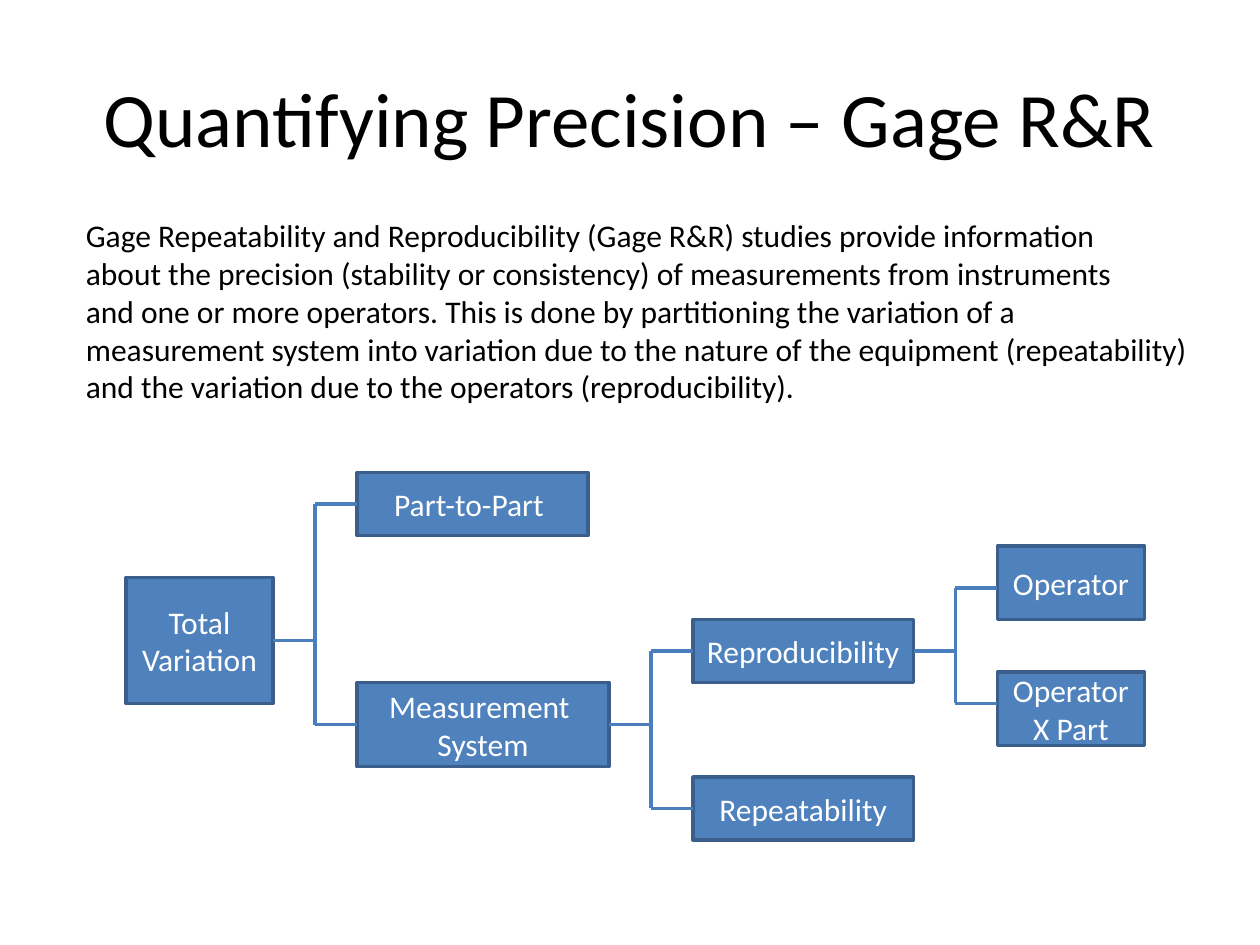
from lxml.etree import SubElement
from pptx import Presentation
from pptx.dml.color import RGBColor
from pptx.enum.shapes import MSO_CONNECTOR, MSO_SHAPE
from pptx.enum.text import MSO_ANCHOR, MSO_AUTO_SIZE, PP_ALIGN
from pptx.oxml.ns import qn
from pptx.util import Pt

COLORS = {
    "text": "000000",
    "box": "4F81BD",
    "box_text": "FFFFFF",
    "box_line": "3A5F8C",
    "branch": "4B7EBC",
}
INTRODUCTION = """Gage Repeatability and Reproducibility (Gage R&R) studies provide information
about the precision (stability or consistency) of measurements from instruments
and one or more operators. This is done by partitioning the variation of a
measurement system into variation due to the nature of the equipment (repeatability)
and the variation due to the operators (reproducibility)."""
BOXES = {
    "total": ("Total\nVariation", 72, 330, 84, 72),
    "part": ("Part-to-Part ", 204, 270, 132, 36),
    "measurement": ("Measurement \nSystem", 204, 390, 144, 48),
    "repeatability": ("Repeatability", 396, 444, 126, 36),
    "reproducibility": ("Reproducibility", 396, 354, 126, 36),
    "operator": ("Operator", 570, 312, 84, 42),
    "interaction": ("Operator\nX Part", 570, 384, 84, 42),
}
BRANCH_GAP = Pt(24)
LEFT_SIDE, RIGHT_SIDE = 1, 3


def color(name):
    return RGBColor.from_string(COLORS[name])


def write_text(frame, text, size=18, fill="text", font="Calibri",
               align=PP_ALIGN.LEFT, anchor=MSO_ANCHOR.TOP, wrap=True):
    frame.word_wrap = wrap
    frame.vertical_anchor = anchor
    for index, line in enumerate(text.split("\n")):
        paragraph = frame.paragraphs[0] if index == 0 else frame.add_paragraph()
        paragraph.alignment = align
        run = paragraph.add_run()
        run.text = line
        run.font.name = font
        run.font.size = Pt(size)
        run.font.color.rgb = color(fill)


def middle(shape):
    return shape.top + shape.height // 2


class DiagramSlide:
    line_width = Pt(2)

    def __init__(self, presentation):
        self.slide = presentation.slides.add_slide(presentation.slide_layouts[6])
        self.shapes = self.slide.shapes

    def text_box(self, text, left, top, width, height, fit=False, **text_format):
        shape = self.shapes.add_textbox(Pt(left), Pt(top), Pt(width), Pt(height))
        write_text(shape.text_frame, text, **text_format)
        if fit:
            shape.text_frame.auto_size = MSO_AUTO_SIZE.SHAPE_TO_FIT_TEXT

    def box(self, text, left, top, width, height):
        shape = self.shapes.add_shape(
            MSO_SHAPE.RECTANGLE, Pt(left), Pt(top), Pt(width), Pt(height))
        shape.shadow.inherit = False
        shape.fill.solid()
        shape.fill.fore_color.rgb = color("box")
        shape.line.color.rgb = color("box_line")
        shape.line.width = self.line_width
        write_text(shape.text_frame, text, fill="box_text",
                   align=PP_ALIGN.CENTER, anchor=MSO_ANCHOR.MIDDLE)
        return shape

    def line(self, start_x, start_y, end_x, end_y):
        connector = self.shapes.add_connector(
            MSO_CONNECTOR.STRAIGHT, start_x, start_y, end_x, end_y)
        connector.line.color.rgb = color("branch")
        connector.line.width = self.line_width
        SubElement(connector.element.spPr, qn("a:effectLst"))
        return connector

    def branch(self, parent, children, inset=0):
        trunk = parent.left + parent.width + BRANCH_GAP
        upper, lower = children
        heights = middle(upper) + Pt(inset), middle(lower) - Pt(inset)
        self.line(trunk, heights[0], trunk, heights[1])
        stem = self.line(trunk - BRANCH_GAP, middle(parent), trunk, middle(parent))
        stem.begin_connect(parent, RIGHT_SIDE)
        for child, height in zip(children, heights):
            twig = self.line(child.left, height, trunk, height)
            if not inset:
                twig.begin_connect(child, LEFT_SIDE)


def main():
    presentation = Presentation()
    presentation.slide_width = Pt(720)
    presentation.slide_height = Pt(540)

    diagram = DiagramSlide(presentation)
    diagram.text_box("Quantifying Precision – Gage R&R", 36, 21.6, 648, 90, size=44,
                     align=PP_ALIGN.CENTER, anchor=MSO_ANCHOR.MIDDLE)
    diagram.text_box(INTRODUCTION, 42, 120, 656, 116.6, wrap=False, fit=True)

    boxes = {name: diagram.box(*values) for name, values in BOXES.items()}
    diagram.branch(boxes["total"], (boxes["part"], boxes["measurement"]))
    diagram.branch(boxes["measurement"],
                   (boxes["reproducibility"], boxes["repeatability"]))
    diagram.branch(boxes["reproducibility"],
                   (boxes["operator"], boxes["interaction"]), inset=3)

    presentation.save("out.pptx")


if __name__ == "__main__":
    main()
